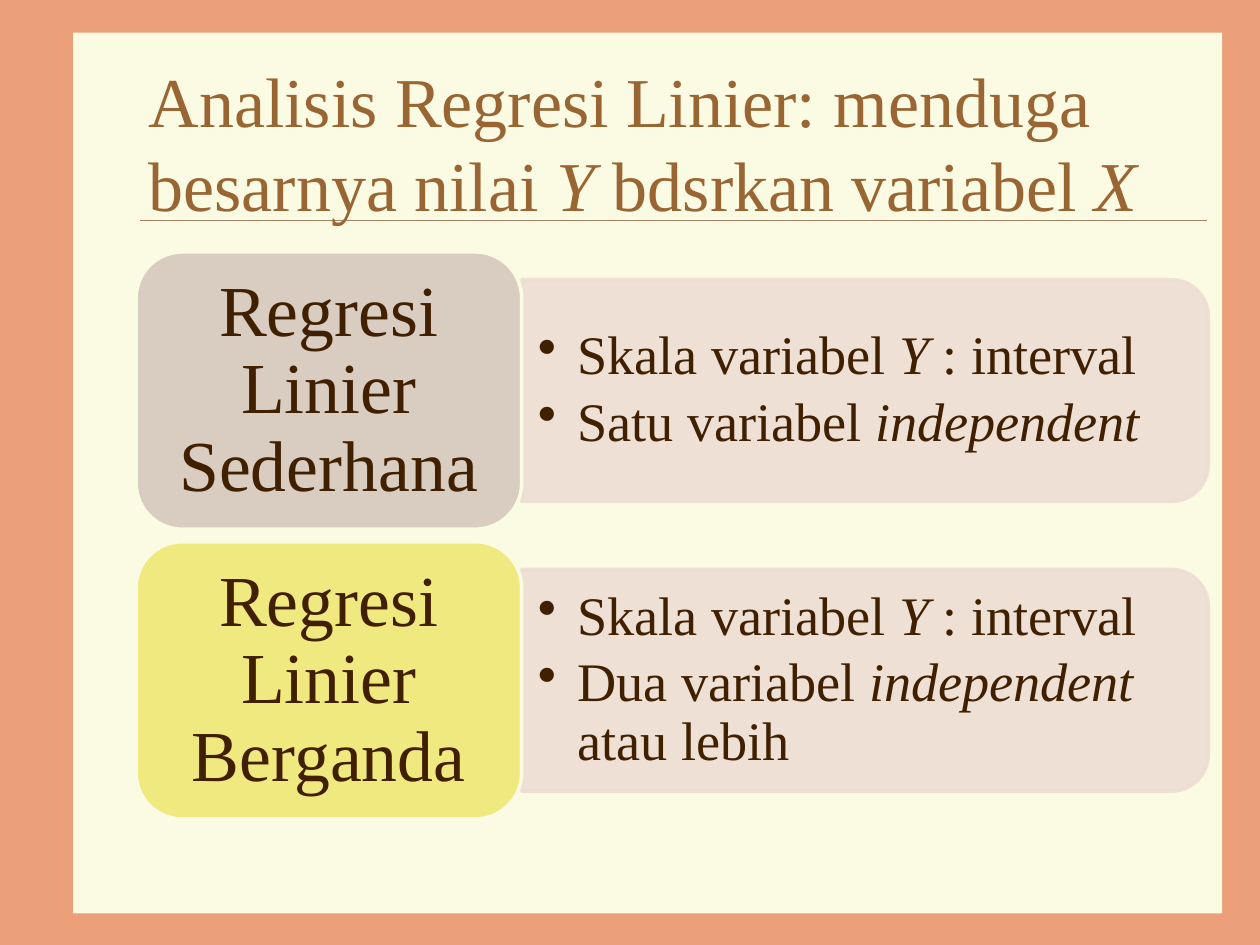
from lxml.etree import SubElement
from pptx import Presentation
from pptx.dml.color import RGBColor
from pptx.enum.shapes import MSO_CONNECTOR, MSO_SHAPE
from pptx.enum.text import MSO_ANCHOR, MSO_AUTO_SIZE, PP_ALIGN
from pptx.oxml.ns import qn
from pptx.util import Pt

# Content: each run is (text, italic)
TITLE = [("Analisis Regresi Linier: menduga besarnya nilai ", False),
         ("Y ", True), ("bdsrkan variabel ", False), ("X", True)]
SCALE = [("Skala variabel ", False), ("Y", True), (" : interval", False)]
ROWS = [
    ("Regresi Linier Sederhana", "simple",
     [SCALE, [("Satu variabel ", False), ("independent", True)]]),
    ("Regresi Linier Berganda", "multi",
     [SCALE, [("Dua variabel ", False), ("independent ", True),
              ("atau lebih", False)]]),
]

THEME = {
    "font": "Times New Roman",
    "edge": "ECA07A", "page": "FBFAE2", "rule": "A08366",
    "title": "996633", "text": "402000", "panel": "EDDED3",
    "simple": "D9CDC2", "multi": "F0E980",
    "title_pt": 40, "card_pt": 41, "item_pt": 31,
}

# Layout in points
LEFT, TOP, RIGHT = 77.8, 144, 690.5
CARD_W, CARD_H, GAP = 220.3, 158.4, 7.2
PANEL_H = CARD_H * 0.8
HANG = 22.5


def color(key):
    return RGBColor.from_string(THEME[key])


def paint(shape, fill, line=None, width=2):
    shape.shadow.inherit = False
    shape.fill.solid()
    shape.fill.fore_color.rgb = color(fill)
    if line:
        shape.line.color.rgb = color(line)
        shape.line.width = Pt(width)
    else:
        shape.line.fill.background()


def fade(props, share):
    for rgb in props.iter(qn("a:srgbClr")):
        SubElement(rgb, qn("a:alpha"), val=str(share * 1000))


def set_frame(frame, pad_x, pad_y):
    form = {"word_wrap": True, "auto_size": MSO_AUTO_SIZE.NONE,
            "vertical_anchor": MSO_ANCHOR.MIDDLE,
            "margin_left": Pt(pad_x), "margin_right": Pt(pad_x),
            "margin_top": Pt(pad_y), "margin_bottom": Pt(pad_y)}
    for name, value in form.items():
        setattr(frame, name, value)


def write(para, runs, size, tone, align=PP_ALIGN.LEFT, space=None):
    para.alignment = align
    if space:
        para.line_spacing = space
    for text, slant in runs:
        run = para.add_run()
        run.text = text
        form = {"name": THEME["font"], "size": Pt(THEME[size]),
                "italic": slant}
        for name, value in form.items():
            setattr(run.font, name, value)
        run.font.color.rgb = color(tone)


def add_bullet(para):
    props = para._p.get_or_add_pPr()
    props.set("marL", str(Pt(HANG)))
    props.set("indent", str(-Pt(HANG)))
    SubElement(props, qn("a:buChar"), char="•")


def add_row(shapes, top, label, fill, items):
    left, wide = LEFT + CARD_W, RIGHT - LEFT - CARD_W
    mid_x, mid_y = left + wide / 2, top + CARD_H / 2

    # Panel: rounded top corners turned to the right
    panel = shapes.add_shape(
        MSO_SHAPE.ROUND_2_SAME_RECTANGLE, Pt(mid_x - PANEL_H / 2),
        Pt(mid_y - wide / 2), Pt(PANEL_H), Pt(wide))
    panel.rotation = 90
    paint(panel, "panel", "panel")
    fade(panel.element.spPr, 90)

    # Bullet list
    high = PANEL_H - 12.6
    box = shapes.add_textbox(Pt(left), Pt(mid_y - high / 2),
                             Pt(wide - 6.3), Pt(high))
    frame = box.text_frame
    set_frame(frame, 9.3, 4.6)
    for i, runs in enumerate(items):
        para = frame.add_paragraph() if i else frame.paragraphs[0]
        add_bullet(para)
        write(para, runs, "item_pt", "text", space=0.9)
        if i < len(items) - 1:
            para.space_after = Pt(4.65)

    # Label card
    card = shapes.add_shape(MSO_SHAPE.ROUNDED_RECTANGLE, Pt(LEFT), Pt(top),
                            Pt(CARD_W), Pt(CARD_H))
    paint(card, fill, "page")
    set_frame(card.text_frame, 12.3, 6.2)
    write(card.text_frame.paragraphs[0], [(label, False)], "card_pt", "text",
          PP_ALIGN.CENTER, 0.9)


def main():
    deck = Presentation()
    deck.slide_width, deck.slide_height = Pt(720), Pt(540)
    slide = deck.slides.add_slide(deck.slide_layouts[5])
    shapes = slide.shapes

    # Background, page and rule
    slide.background.fill.solid()
    slide.background.fill.fore_color.rgb = color("edge")
    page = shapes.add_shape(MSO_SHAPE.RECTANGLE, Pt(41.8), Pt(18.7),
                            Pt(656.6), Pt(503.3))
    paint(page, "page")
    rule = shapes.add_connector(MSO_CONNECTOR.STRAIGHT, Pt(80), Pt(126),
                                Pt(690), Pt(126))
    rule.line.color.rgb = color("rule")
    rule.line.width = Pt(0.25)
    SubElement(rule.element.spPr, qn("a:effectLst"))

    # Title, brought in front of the page
    title = shapes.title
    shapes.element.append(title.element)
    place = {"left": LEFT, "top": 36, "width": 612, "height": 90}
    for name, value in place.items():
        setattr(title, name, Pt(value))
    set_frame(title.text_frame, 7.2, 3.6)
    write(title.text_frame.paragraphs[0], TITLE, "title_pt", "title")

    # Rows
    for i, row in enumerate(ROWS):
        add_row(shapes, TOP + i * (CARD_H + GAP), *row)

    deck.save("out.pptx")


if __name__ == "__main__":
    main()
